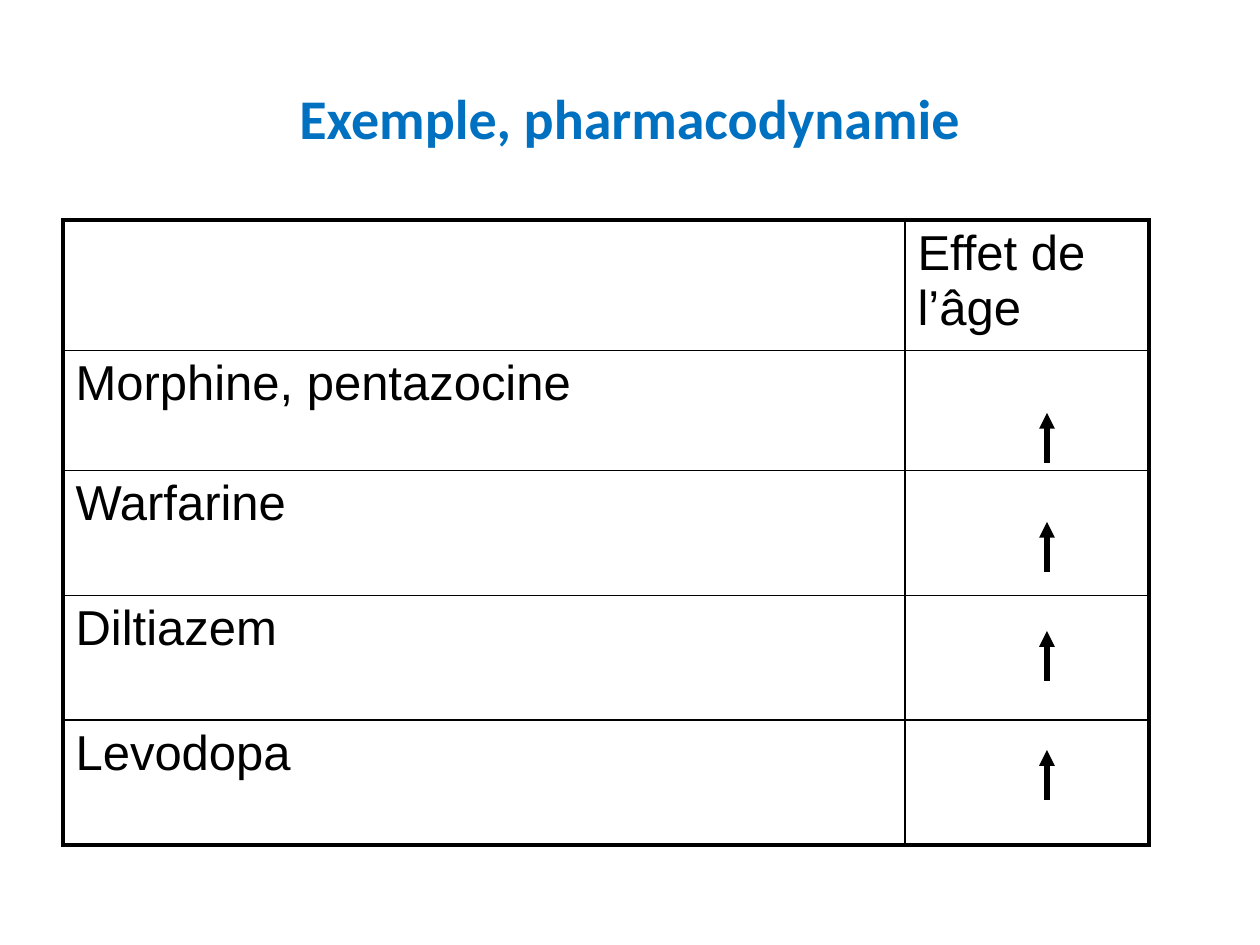
import pptx
import pptx.dml.color
import pptx.enum.shapes
import pptx.enum.text
import pptx.oxml
import pptx.oxml.ns
import pptx.util

EMU_PER_PX = 914400 / 126
BLACK = pptx.dml.color.RGBColor(0x00, 0x00, 0x00)
BLUE = pptx.dml.color.RGBColor(0x00, 0x70, 0xC0)

TITLE_FONT = {"name": "Calibri", "size": pptx.util.Pt(32), "bold": True}
CELL_FONT = {"name": "Arial", "size": pptx.util.Pt(28), "bold": False}
THIN, THICK = 1, 2.25

ROWS = [
    ("", "Effet de l’âge"),
    ("Morphine, pentazocine", ""),
    ("Warfarine", ""),
    ("Diltiazem", ""),
    ("Levodopa", ""),
]
COL_WIDTHS = [842, 244]
ROW_HEIGHTS = [130, 120, 125, 125, 125]
ARROW_X, ARROW_LENGTH = 1047, 50
ARROW_TOPS = [413, 522, 631, 750]


def px(n):
    return pptx.util.Emu(round(n * EMU_PER_PX))


def write(tf, text, font, color):
    p = tf.paragraphs[0]
    r = p.add_run()
    r.text = text
    for key, value in font.items():
        setattr(r.font, key, value)
    r.font.color.rgb = color
    return p


def add_title(s, text, left, top, width, height):
    tf = s.shapes.add_textbox(px(left), px(top), px(width), px(height)).text_frame
    tf.word_wrap = True
    tf.vertical_anchor = pptx.enum.text.MSO_ANCHOR.MIDDLE
    p = write(tf, text, TITLE_FONT, BLUE)
    p.alignment = pptx.enum.text.PP_ALIGN.CENTER


def set_borders(cell, widths):
    """Put solid borders, widths in points by side, ahead of the cell fill."""
    tc_pr = cell._tc.get_or_add_tcPr()
    for i, (side, width) in enumerate(widths.items()):
        tc_pr.insert(i, pptx.oxml.parse_xml(
            f'<a:ln{side} {pptx.oxml.ns.nsdecls("a")} w="{pptx.util.Pt(width)}">'
            f'<a:solidFill><a:srgbClr val="{BLACK}"/></a:solidFill></a:ln{side}>'))


def add_table(s, left, top):
    n_rows, n_cols = len(ROWS), len(COL_WIDTHS)
    table = s.shapes.add_table(n_rows, n_cols, px(left), px(top),
                               px(sum(COL_WIDTHS)), px(sum(ROW_HEIGHTS))).table
    table.first_row = table.horz_banding = False
    for col, width in zip(table.columns, COL_WIDTHS):
        col.width = px(width)
    for row, height in zip(table.rows, ROW_HEIGHTS):
        row.height = px(height)

    for i, texts in enumerate(ROWS):
        for j, text in enumerate(texts):
            cell = table.cell(i, j)
            cell.fill.background()
            if text:
                write(cell.text_frame, text, CELL_FONT, BLACK)
            # Thick frame outside, thin grid inside
            outer = {"L": j == 0, "R": j == n_cols - 1,
                     "T": i == 0, "B": i == n_rows - 1}
            set_borders(cell, {side: THICK if edge else THIN
                               for side, edge in outer.items()})


def add_up_arrow(s, x, top):
    sp = s.shapes.add_connector(pptx.enum.shapes.MSO_CONNECTOR.STRAIGHT,
                                px(x), px(top + ARROW_LENGTH), px(x), px(top))
    sp.line.color.rgb = BLACK
    sp.line.width = pptx.util.Pt(3)
    ns = pptx.oxml.ns.nsdecls("a")
    sp.line._get_or_add_ln().append(
        pptx.oxml.parse_xml(f'<a:tailEnd {ns} type="triangle"/>'))
    sp._element.spPr.append(pptx.oxml.parse_xml(f"<a:effectLst {ns}/>"))


def main():
    prs = pptx.Presentation()
    prs.slide_width, prs.slide_height = px(1260), px(945)
    s = prs.slides.add_slide(prs.slide_layouts[6])

    # Title
    add_title(s, "Exemple, pharmacodynamie", 63, 38, 1134, 158)

    # Drugs and the effect of age
    add_table(s, 63, 220)
    for top in ARROW_TOPS:
        add_up_arrow(s, ARROW_X, top)

    prs.save("out.pptx")


if __name__ == "__main__":
    main()
